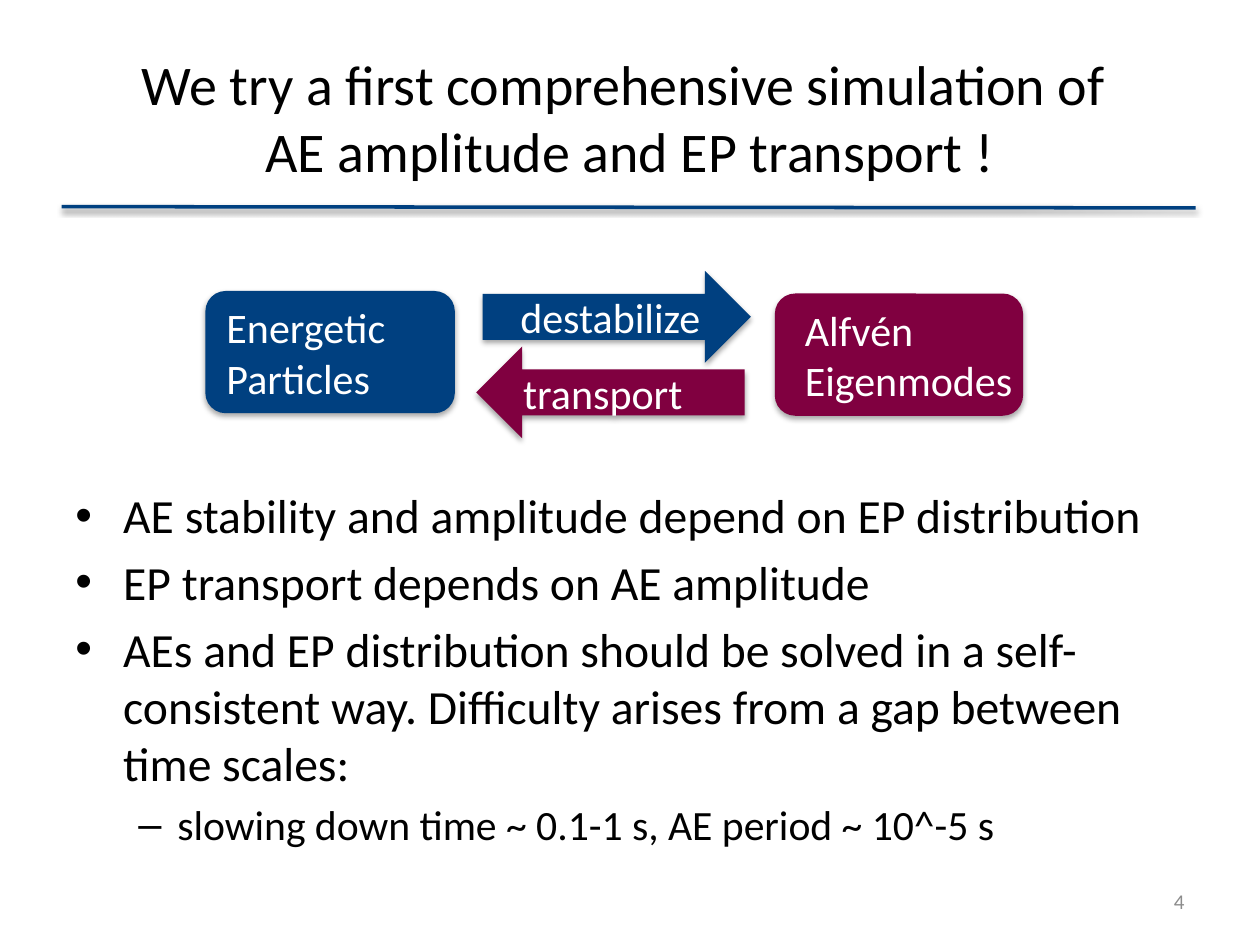
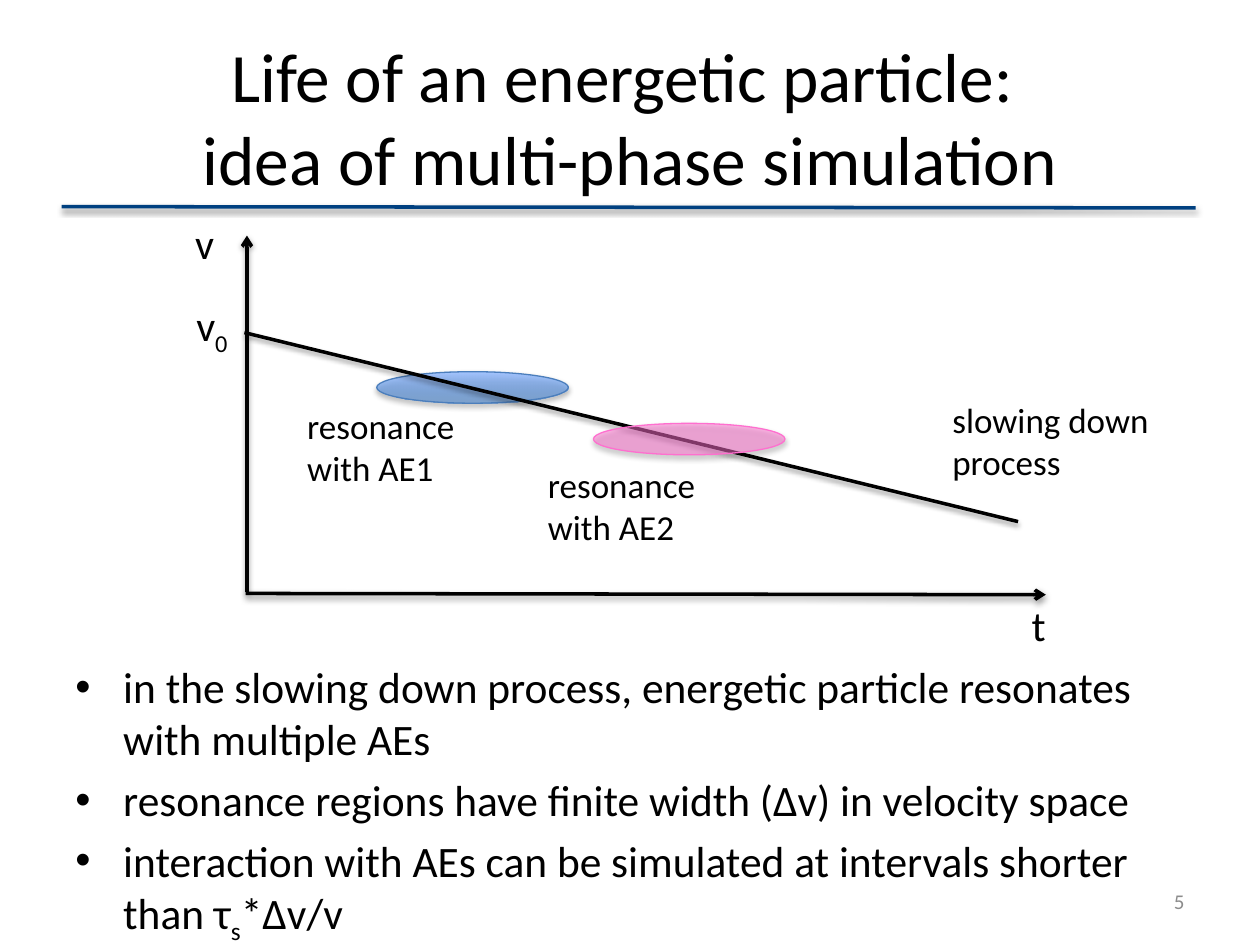
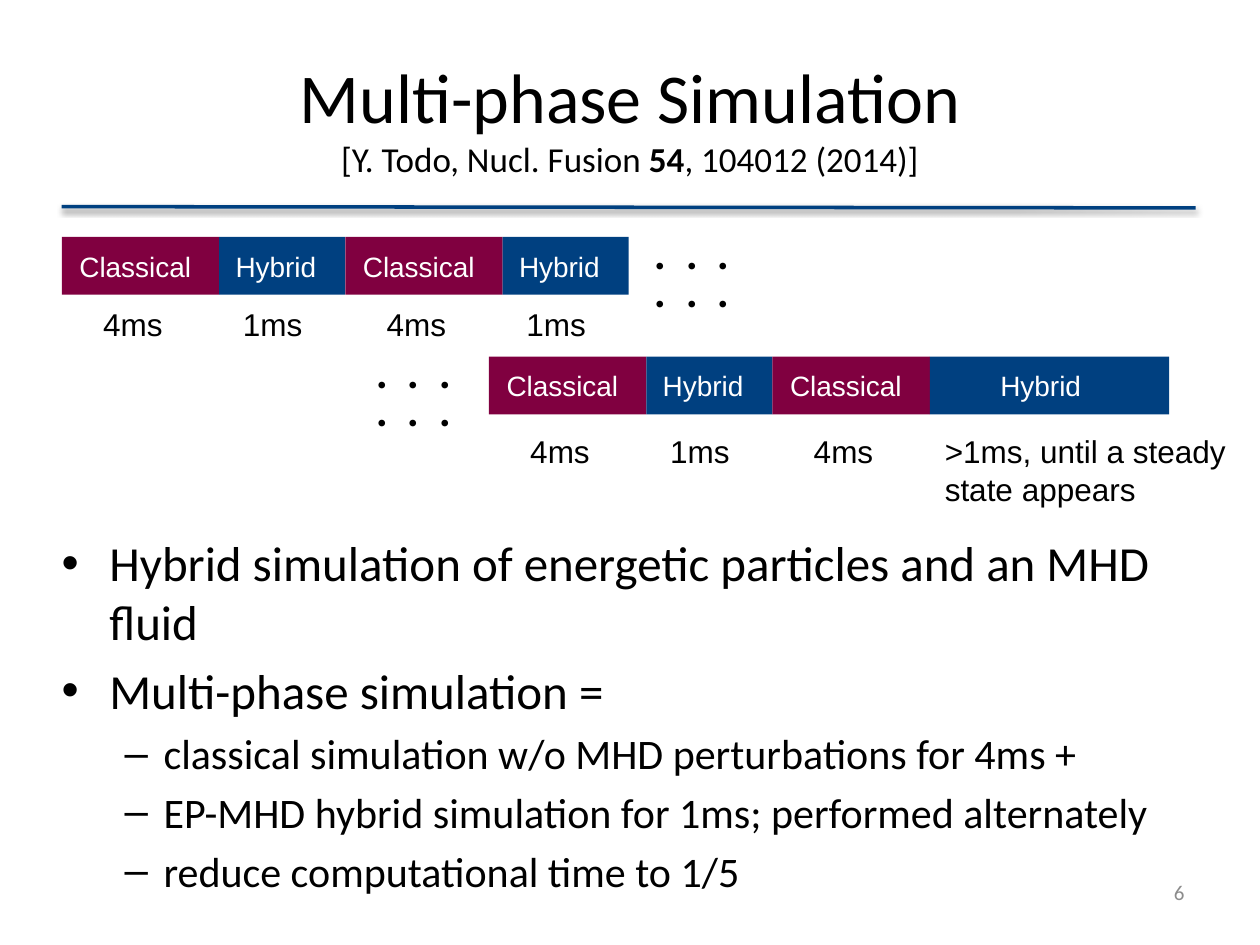
from lxml import etree
from pptx import Presentation
from pptx.dml.color import RGBColor
from pptx.enum.shapes import MSO_CONNECTOR, MSO_SHAPE
from pptx.enum.text import MSO_ANCHOR, MSO_AUTO_SIZE, PP_ALIGN
from pptx.oxml.ns import qn
from pptx.util import Emu, Pt

PX = 9144  # 100 px to the inch
TITLE_ONLY = 5
STRAIGHT = MSO_CONNECTOR.STRAIGHT
RECT, ROUNDED, ELLIPSE = MSO_SHAPE.RECTANGLE, MSO_SHAPE.ROUNDED_RECTANGLE, MSO_SHAPE.OVAL
RIGHT_ARROW, LEFT_ARROW = MSO_SHAPE.RIGHT_ARROW, MSO_SHAPE.LEFT_ARROW
MIDDLE, NO_FIT = MSO_ANCHOR.MIDDLE, MSO_AUTO_SIZE.NONE
LEFT, CENTER, RIGHT = PP_ALIGN.LEFT, PP_ALIGN.CENTER, PP_ALIGN.RIGHT

BLUE, WINE, PINK = "004080", "800040", "FF6FCF"
BLACK, WHITE, GRAY = "000000", "FFFFFF", "8C8C8C"
BODY_FONT, DIAGRAM_FONT = "Calibri", "Arial"
BULLETS = [("•", 38, -38), ("–", 81, -31)]  # sign, margin, indent by level
CLASSICAL, HYBRID = ("Classical", WINE, 125), ("Hybrid", BLUE, 100)
STEADY = ("Hybrid", BLUE, 190)


def px(*lengths):
    return [Emu(length * PX) for length in lengths]


def rgb(color):
    return RGBColor.from_string(color)


def write(paragraph, *runs, size=24, color=BLACK, font=BODY_FONT, align=LEFT):
    """Add runs, each a string or a (string, overrides) pair; a newline is a line break."""
    paragraph.alignment = align
    for item in runs:
        text, special = (item, {}) if isinstance(item, str) else item
        points = special.get("size", size)
        for number, line in enumerate(text.split("\n")):
            if number:
                paragraph.add_line_break()
                etree.SubElement(paragraph._p[-1], qn("a:rPr"), sz=str(round(points * 100)))
            if not line:
                continue
            run = paragraph.add_run()
            run.text = line
            run.font.size = Pt(points)
            run.font.name = font
            run.font.color.rgb = rgb(color)
            if special.get("bold"):
                run.font.bold = True
            if special.get("sub"):
                run._r.get_or_add_rPr().set("baseline", "-25000")


def add_shadow(effects, alpha, distance):
    shadow = etree.SubElement(effects, qn("a:outerShdw"), blurRad="40000", dist=str(distance),
                              dir="5400000", rotWithShape="0")
    tint = etree.SubElement(shadow, qn("a:srgbClr"), val=BLACK)
    etree.SubElement(tint, qn("a:alpha"), val=str(alpha * 1000))


def add_label(slide, box, *runs, **text_format):
    frame = slide.shapes.add_textbox(*px(*box)).text_frame
    frame.word_wrap = True
    write(frame.paragraphs[0], *runs, **text_format)
    return frame


def add_block(slide, kind, box, fill, label="", inset=0, shadow=True, **text_format):
    block = slide.shapes.add_shape(kind, *px(*box))
    block.fill.solid()
    block.fill.fore_color.rgb = rgb(fill)
    block.line.fill.background()
    block.shadow.inherit = False
    if shadow:
        add_shadow(block.element.spPr.find(qn("a:effectLst")), 35, 23000)
    if label:
        frame = block.text_frame
        frame.word_wrap = True
        frame.vertical_anchor = MIDDLE
        frame.margin_left, frame.margin_right, frame.margin_top, frame.margin_bottom = px(inset, 0, 0, 0)
        write(frame.paragraphs[0], label, color=WHITE, **text_format)
    return block


def add_resonance(slide, left, top, fill, outline, opacity, fill_top=None):
    """Add a see-through ellipse, shaded from fill up to fill_top if that is given."""
    region = add_block(slide, ELLIPSE, (left, top, 152, 25), fill)
    region.line.color.rgb = rgb(outline)
    region.line.width = Pt(0.75)
    if fill_top:
        region.fill.gradient()
        region.fill.gradient_angle = 90
        for stop, color in zip(region.fill.gradient_stops, (fill, fill_top)):
            stop.color.rgb = rgb(color)
    first_color = region.element.spPr.find(".//" + qn("a:srgbClr"))
    etree.SubElement(first_color, qn("a:alpha"), val=str(opacity * 1000))


def add_line(slide, start, end, color=BLACK, arrow=False):
    line = slide.shapes.add_connector(STRAIGHT, *px(*start, *end))
    line.line.color.rgb = rgb(color)
    line.line.width = Pt(2)
    properties = line.element.spPr
    if arrow:
        etree.SubElement(properties.find(qn("a:ln")), qn("a:tailEnd"), type="arrow")
    add_shadow(etree.SubElement(properties, qn("a:effectLst")), 38, 20000)


def add_bullets(slide, box, size, sub_size, items):
    """Add a list from (level, run, run, ...) tuples."""
    frame = slide.shapes.add_textbox(*px(*box)).text_frame
    frame.word_wrap = True
    for number, (level, *runs) in enumerate(items):
        paragraph = frame.add_paragraph() if number else frame.paragraphs[0]
        points = sub_size if level else size
        paragraph.level = level
        paragraph.space_before = Pt(round(points * 0.2, 1))
        write(paragraph, *runs, size=points)
        sign, margin, indent = BULLETS[level]
        properties = paragraph._p.get_or_add_pPr()
        properties.set("marL", str(margin * PX))
        properties.set("indent", str(indent * PX))
        etree.SubElement(properties, qn("a:buFont"), typeface="Arial")
        etree.SubElement(properties, qn("a:buChar"), char=sign)


def add_slide(prs, number, *title, size, number_top=695):
    """Add a slide with its title, the rule under it and the slide number."""
    slide = prs.slides.add_slide(prs.slide_layouts[TITLE_ONLY])
    heading = slide.shapes.title
    heading.left, heading.top, heading.width, heading.height = px(50, 30, 900, 125)
    heading.text_frame.auto_size = NO_FIT
    heading.text_frame.vertical_anchor = MIDDLE
    write(heading.text_frame.paragraphs[0], *title, size=size, align=CENTER)
    add_line(slide, (49, 164), (949, 165), BLUE)
    frame = add_label(slide, (717, number_top, 233, 40), str(number), size=12, color=GRAY, align=RIGHT)
    frame.vertical_anchor = MIDDLE
    return slide


def add_timeline(slide, left, top, label_top, phases):
    """Add adjoining blocks from (phase, inset, duration, duration offset, duration width)."""
    for (name, color, width), inset, duration, offset, label_width in phases:
        add_block(slide, RECT, (left, top, width, 46), color, name, inset,
                  shadow=False, size=16, font=DIAGRAM_FONT)
        add_label(slide, (left + offset, label_top, label_width, 40), duration,
                  size=18, font=DIAGRAM_FONT)
        left += width


def build_feedback_slide(prs):
    slide = add_slide(prs, 4, "We try a first comprehensive simulation of \n"
                      "AE amplitude and EP transport !", size=32)
    add_block(slide, ROUNDED, (615, 233, 197, 97), WINE, "Alfvén Eigenmodes", 19)
    add_block(slide, ROUNDED, (163, 231, 198, 97), BLUE, "Energetic Particles", 12)
    add_block(slide, RIGHT_ARROW, (383, 215, 213, 73), BLUE, "destabilize", 30)
    add_block(slide, LEFT_ARROW, (378, 275, 213, 73), WINE, "transport", 19)
    add_bullets(slide, (50, 381, 900, 311), 27.2, 23.8, [
        (0, "AE stability and amplitude depend on EP distribution"),
        (0, "EP transport depends on AE amplitude"),
        (0, "AEs and EP distribution should be solved in a self-consistent way. "
            "Difficulty arises from a gap between time scales:"),
        (1, "slowing down time ~ 0.1-1 s, AE period ~ 10^-5 s"),
    ])


def build_particle_life_slide(prs):
    slide = add_slide(prs, 5, "Life of an energetic particle: \nidea of multi-phase simulation", size=39.6)
    add_resonance(slide, 299, 295, "3F80CE", "4B7EBC", 53, fill_top="A4C4FF")
    add_line(slide, (196, 470), (196, 187), arrow=True)
    add_line(slide, (195, 471), (830, 472), arrow=True)
    add_line(slide, (194, 264), (808, 414))
    add_resonance(slide, 471, 336, PINK, PINK, 50)
    add_label(slide, (809, 471, 43, 50), "t")
    add_label(slide, (145, 168, 43, 50), "v")
    add_label(slide, (146, 233, 56, 50), "v", ("0", {"sub": True}))
    add_label(slide, (746, 311, 205, 77), "slowing down process", size=20)
    add_label(slide, (234, 316, 166, 77), "resonance with AE1", size=20)
    add_label(slide, (425, 363, 166, 77), "resonance with AE2", size=20)
    add_bullets(slide, (50, 519, 900, 194), 24.8, 24.8, [
        (0, "in the slowing down process, energetic particle resonates with multiple AEs"),
        (0, "resonance regions have finite width (Δv) in velocity space"),
        (0, "interaction with AEs can be simulated at intervals shorter than τ",
            ("s", {"sub": True}), "*Δv/v"),
    ])


def build_multi_phase_slide(prs):
    slide = add_slide(prs, 6, "Multi-phase Simulation\n", ("[Y. Todo, Nucl. Fusion ", {"size": 20}),
                      ("54", {"size": 20, "bold": True}), (", 104012 (2014)]", {"size": 20}),
                      size=40, number_top=688)
    classical = (CLASSICAL, 14, "4ms", 23, 79)
    hybrid = (HYBRID, 13, "1ms", 9, 79)
    steady = (STEADY, 56, ">1ms, until a steady state appears", 2, 245)
    add_timeline(slide, 49, 188, 237, [classical, hybrid] * 2)
    add_timeline(slide, 388, 283, 338, [classical, hybrid, classical, steady])
    for left, top in ((502, 191), (281, 286)):
        add_label(slide, (left, top, 106, 40), "・・・・・・", size=18, font=DIAGRAM_FONT)
    add_bullets(slide, (39, 418, 934, 310), 28, 24, [
        (0, "Hybrid simulation of energetic particles and an MHD fluid"),
        (0, "Multi-phase simulation ="),
        (1, "classical simulation w/o MHD perturbations for 4ms +"),
        (1, "EP-MHD hybrid simulation for 1ms; performed alternately"),
        (1, "reduce computational time to 1/5"),
    ])


def main():
    prs = Presentation()
    prs.slide_width, prs.slide_height = px(1000, 750)
    build_feedback_slide(prs)
    build_particle_life_slide(prs)
    build_multi_phase_slide(prs)
    prs.save("out.pptx")


if __name__ == "__main__":
    main()
